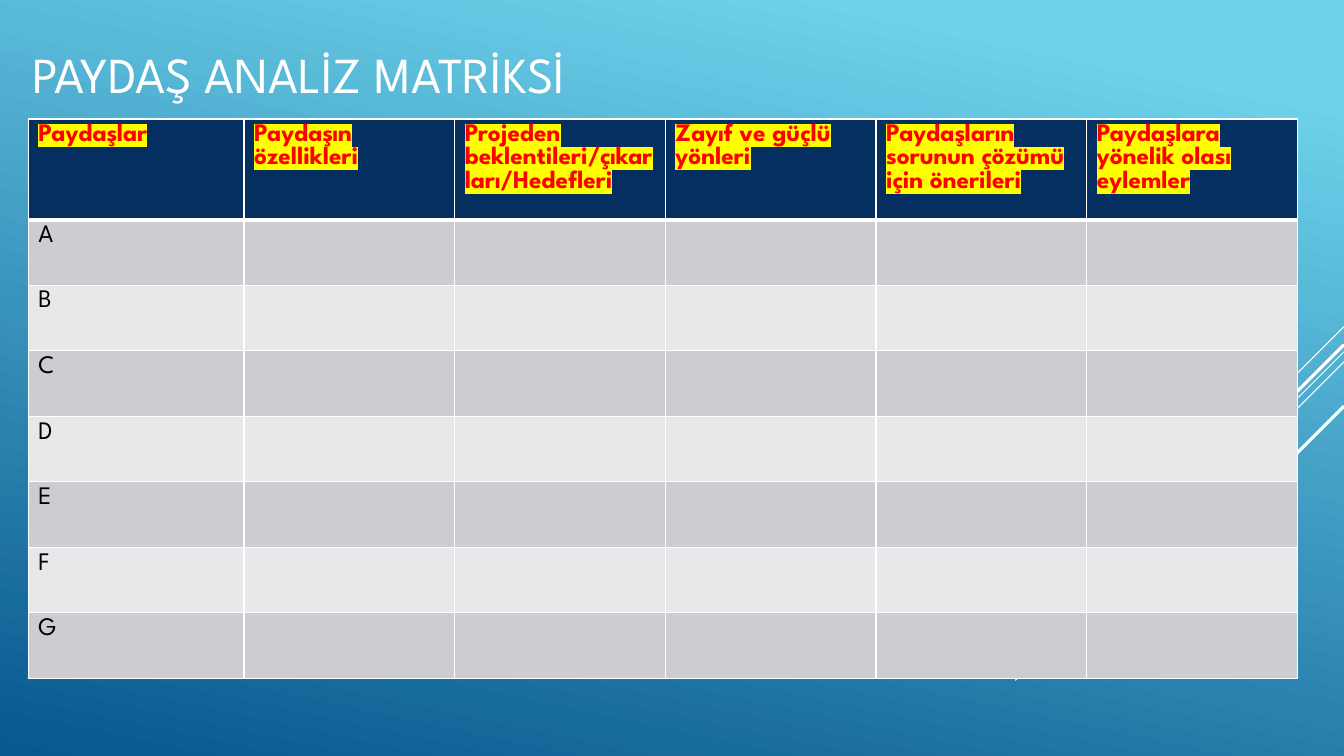
from lxml.etree import SubElement
from pptx import Presentation
from pptx.dml.color import RGBColor
from pptx.enum.shapes import MSO_CONNECTOR
from pptx.enum.text import MSO_ANCHOR
from pptx.oxml import parse_xml
from pptx.oxml.ns import nsdecls, qn
from pptx.util import Inches, Pt

TITLE = "PAYDAŞ ANALİZ MATRİKSİ"
HEADINGS = [
    "Paydaşlar",
    "Paydaşın özellikleri",
    "Projeden beklentileri/çıkarları/Hedefleri",
    "Zayıf ve güçlü yönleri",
    "Paydaşların sorunun çözümü için önerileri",
    "Paydaşlara yönelik olası eylemler",
]
STAKEHOLDERS = "ABCDEFG"

# Diagonals start on the right edge: top, run to the lower left, width in points
DIAGONALS = [
    (3.24, 1.0, 0.75),
    (3.49, 3.26, 0.75),
    (3.59, 2.07, 0.75),
    (3.42, 1.91, 2.25),
    (4.03, 1.39, 2.25),
]
SKY = [(0.1, "6ED2EB"), (1.0, "06588E")]
BANDS = ["CCCDD2", "E7E8EA"]
WHITE, NAVY, HIGHLIGHT = "FFFFFF", "052F61", "FFFF00"

FONT = "League Spartan"
TITLE_FORMAT = {"name": FONT, "size": Pt(36), "bold": False}
HEADING_FORMAT = {"name": FONT, "size": Pt(18), "bold": True}
BODY_FORMAT = {"name": FONT, "size": Pt(18), "bold": False}

SLIDE_W, SLIDE_H = 13.33, 7.5
TABLE_LEFT, TABLE_TOP = 0.28, 1.18
COLUMN_WIDTHS = [2.14] + [2.09] * 5
ROW_HEIGHTS = [0.78] + [0.65] * len(STAKEHOLDERS)


def color(value):
    return RGBColor.from_string(value)


def write(frame, text, style, ink):
    run = frame.paragraphs[0].add_run()
    run.text = text
    for key, value in style.items():
        setattr(run.font, key, value)
    run.font.fill.solid()
    run.font.fill.fore_color.rgb = color(ink)
    return run


def highlight(run):
    ink = run.font._element.find(qn("a:solidFill"))
    ink.addnext(parse_xml(
        f'<a:highlight {nsdecls("a")}><a:srgbClr val="{HIGHLIGHT}"/></a:highlight>'))


def set_borders(cell, widths):
    """Draw white borders; widths maps the side letters L, R, T, B to points."""
    properties = cell._tc.get_or_add_tcPr()
    for side, width in widths.items():
        border = SubElement(properties, qn(f"a:ln{side}"), w=str(Pt(width)))
        SubElement(SubElement(border, qn("a:solidFill")), qn("a:srgbClr"), val=WHITE)


def add_background(slide):
    sky = slide.background.fill
    sky.gradient()
    sky.gradient_angle = 258
    for stop, (position, shade) in zip(sky.gradient_stops, SKY):
        stop.position = position
        stop.color.rgb = color(shade)


def add_diagonals(slide):
    for top, run, width in DIAGONALS:
        ends = (SLIDE_W, top, SLIDE_W - run, top + run)
        diagonal = slide.shapes.add_connector(
            MSO_CONNECTOR.STRAIGHT, *(Inches(end) for end in ends))
        diagonal.line.color.rgb = color(WHITE)
        diagonal.line.width = Pt(width)
        SubElement(diagonal._element.spPr, qn("a:effectLst"))


def add_title(slide):
    frame = slide.shapes.add_textbox(
        Inches(0.22), Inches(0.1), Inches(10.89), Inches(1.25)).text_frame
    frame.word_wrap = True
    frame.vertical_anchor = MSO_ANCHOR.MIDDLE
    write(frame, TITLE, TITLE_FORMAT, WHITE)


def add_matrix(slide):
    matrix = slide.shapes.add_table(
        len(ROW_HEIGHTS), len(COLUMN_WIDTHS), Inches(TABLE_LEFT), Inches(TABLE_TOP),
        Inches(sum(COLUMN_WIDTHS)), Inches(sum(ROW_HEIGHTS))).table
    for column, width in zip(matrix.columns, COLUMN_WIDTHS):
        column.width = Inches(width)
    for row, height in zip(matrix.rows, ROW_HEIGHTS):
        row.height = Inches(height)

    for r, row in enumerate(matrix.rows):
        for cell in row.cells:
            set_borders(cell, {"L": 1, "R": 1, "T": 3 if r == 1 else 1,
                               "B": 3 if r == 0 else 1})
            cell.fill.solid()
            cell.fill.fore_color.rgb = color(BANDS[(r - 1) % 2] if r else NAVY)

    for c, heading in enumerate(HEADINGS):
        highlight(write(matrix.cell(0, c).text_frame, heading, HEADING_FORMAT, "FF0000"))
    for r, stakeholder in enumerate(STAKEHOLDERS, 1):
        write(matrix.cell(r, 0).text_frame, stakeholder, BODY_FORMAT, "000000")


def main():
    deck = Presentation()
    deck.slide_width, deck.slide_height = Inches(SLIDE_W), Inches(SLIDE_H)
    slide = deck.slides.add_slide(deck.slide_layouts[6])
    add_background(slide)
    add_diagonals(slide)
    add_title(slide)
    add_matrix(slide)
    deck.save("out.pptx")


if __name__ == "__main__":
    main()
